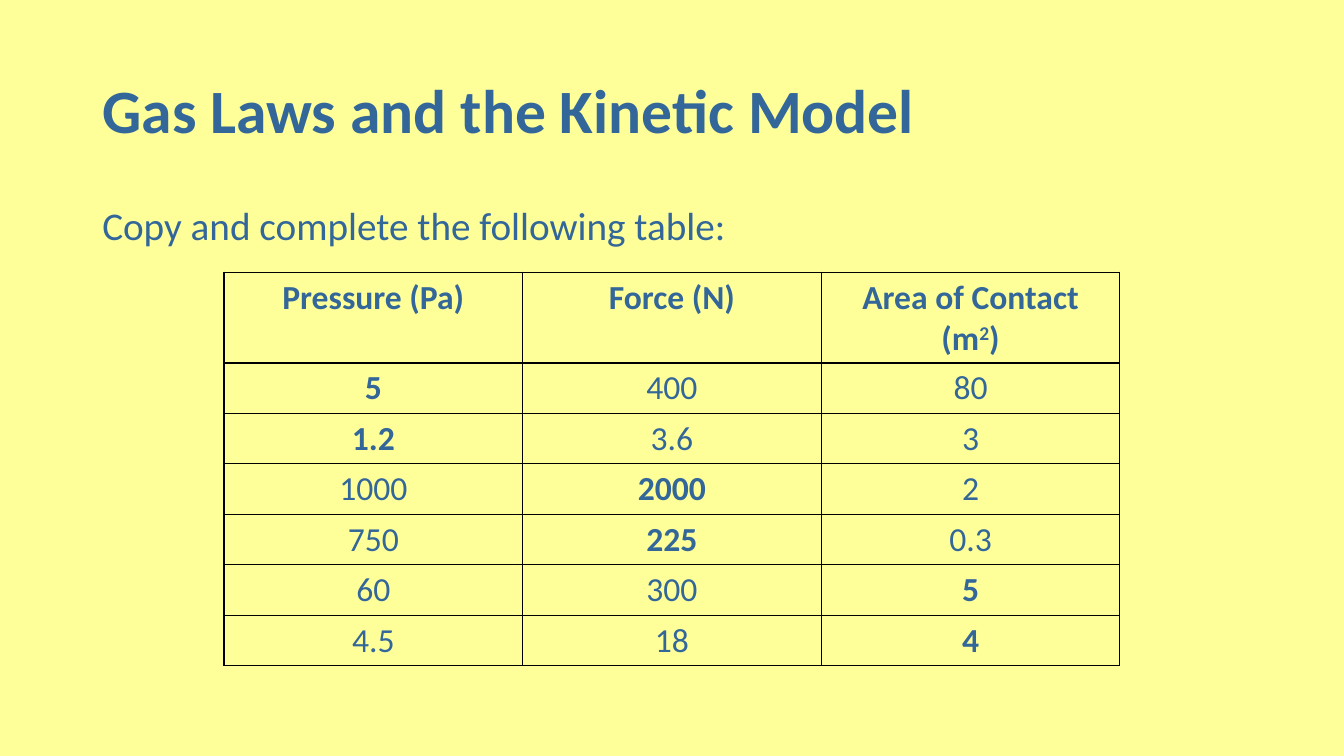
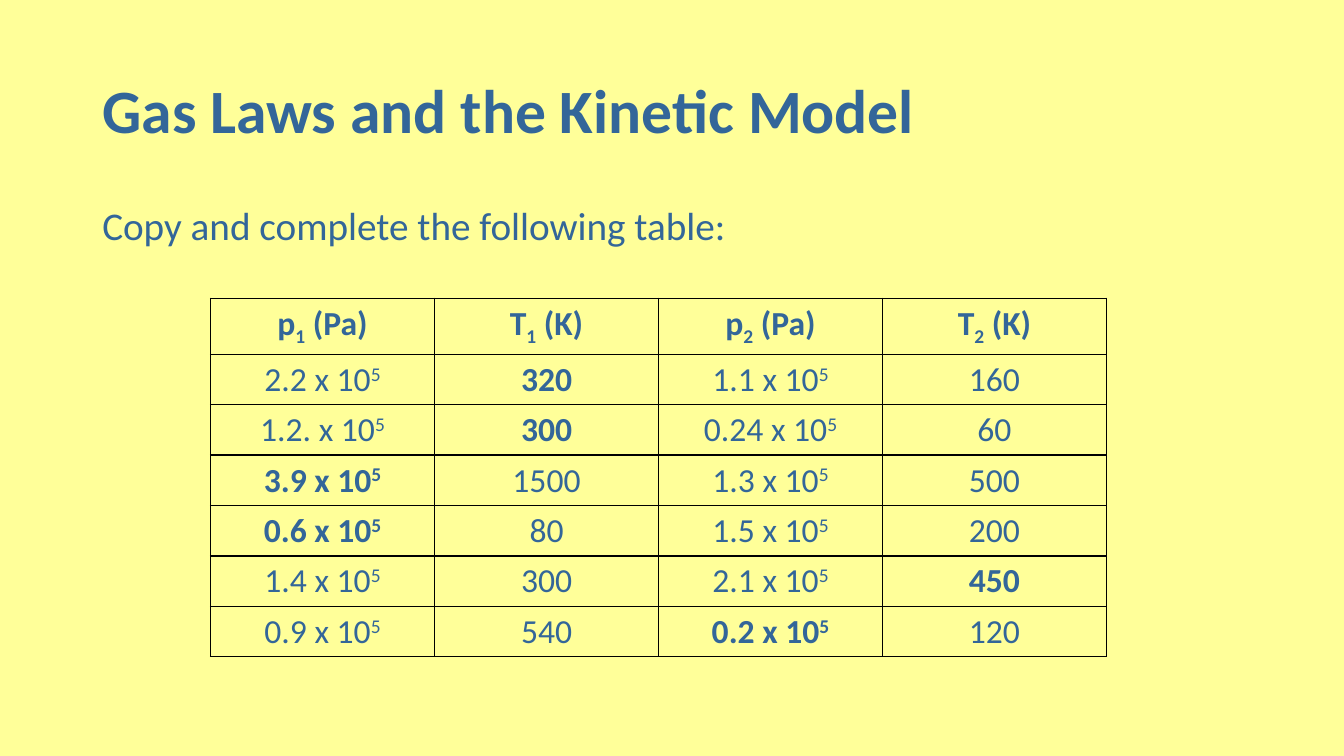
from pptx import Presentation
from pptx.dml.color import RGBColor
from pptx.enum.text import MSO_ANCHOR, PP_ALIGN
from pptx.oxml.ns import qn
from pptx.util import Pt
from lxml.etree import SubElement

COLORS = {"paper": "FFFF99", "ink": "336699", "grid": "000000"}
BASELINES = {"^": "30000", "_": "-25000"}
TITLE = "Gas Laws and the Kinetic Model"
TASK = "Copy and complete the following table:"
TABLE_WIDTH = 640
ROW_HEIGHT = 36

# A leading * makes an answer bold; | splits off a raised ^ or lowered _ part.
EXERCISES = [
    (160, 194.4, [
        ["*Pressure (Pa)", "*Force (N)", "*Area of Contact (m|^2|)"],
        ["*5", "400", "80"],
        ["*1.2", "3.6", "3"],
        ["1000", "*2000", "2"],
        ["750", "*225", "0.3"],
        ["60", "300", "*5"],
        ["4.5", "18", "*4"],
    ]),
    (150.4, 213, [
        ["*p|_1| (Pa)", "*T|_1| (K)", "*p|_2| (Pa)", "*T|_2| (K)"],
        ["2.2 x 10|^5", "*320", "1.1 x 10|^5", "160"],
        ["1.2. x 10|^5", "*300", "0.24 x 10|^5", "60"],
        ["*3.9 x 10|^5", "1500", "1.3 x 10|^5", "500"],
        ["*0.6 x 10|^5", "80", "1.5 x 10|^5", "200"],
        ["1.4 x 10|^5", "300", "2.1 x 10|^5", "*450"],
        ["0.9 x 10|^5", "540", "*0.2 x 10|^5", "120"],
    ]),
]


def style(paragraph, size, bold, align):
    paragraph.alignment = align
    font = paragraph.font
    font.name, font.size, font.bold = "Calibri", Pt(size), bold
    font.color.rgb = RGBColor.from_string(COLORS["ink"])


def fill_cell(cell, marked):
    paragraph = cell.text_frame.paragraphs[0]
    style(paragraph, 24, marked.startswith("*"), PP_ALIGN.CENTER)
    for part in marked.removeprefix("*").split("|"):
        run = paragraph.add_run()
        run.text = part.lstrip("^_")
        if part[0] in BASELINES:
            run._r.get_or_add_rPr().set("baseline", BASELINES[part[0]])
    properties = cell._tc.get_or_add_tcPr()
    for side in ("lnL", "lnR", "lnT", "lnB"):
        border = SubElement(properties, qn(f"a:{side}"), w=str(Pt(1)))
        solid = SubElement(border, qn("a:solidFill"))
        SubElement(solid, qn("a:srgbClr"), val=COLORS["grid"])
    cell.fill.background()


deck = Presentation()
deck.slide_width, deck.slide_height = Pt(960), Pt(540)
paper = deck.slide_master.background.fill
paper.solid()
paper.fore_color.rgb = RGBColor.from_string(COLORS["paper"])

for left, top, rows in EXERCISES:
    slide = deck.slides.add_slide(deck.slide_layouts[5])

    title = slide.shapes.title
    title.left, title.top, title.width, title.height = Pt(66), Pt(28.8), Pt(828), Pt(104.4)
    title.text_frame.text = TITLE
    title.text_frame.vertical_anchor = MSO_ANCHOR.MIDDLE
    heading = title.text_frame.paragraphs[0]
    heading.line_spacing = 0.9
    style(heading, 44, True, PP_ALIGN.LEFT)

    task = slide.shapes.add_textbox(Pt(66), Pt(143.8), Pt(828), Pt(40)).text_frame
    task.word_wrap = True
    task.text = TASK
    instruction = task.paragraphs[0]
    instruction.line_spacing = 0.9
    instruction.space_before = Pt(10)
    style(instruction, 28, False, PP_ALIGN.LEFT)

    table = slide.shapes.add_table(
        len(rows), len(rows[0]), Pt(left), Pt(top), Pt(TABLE_WIDTH), Pt(ROW_HEIGHT * len(rows))
    ).table
    table.first_row = table.horz_banding = False
    for row, entries in enumerate(rows):
        for column, marked in enumerate(entries):
            fill_cell(table.cell(row, column), marked)

deck.save("out.pptx")
